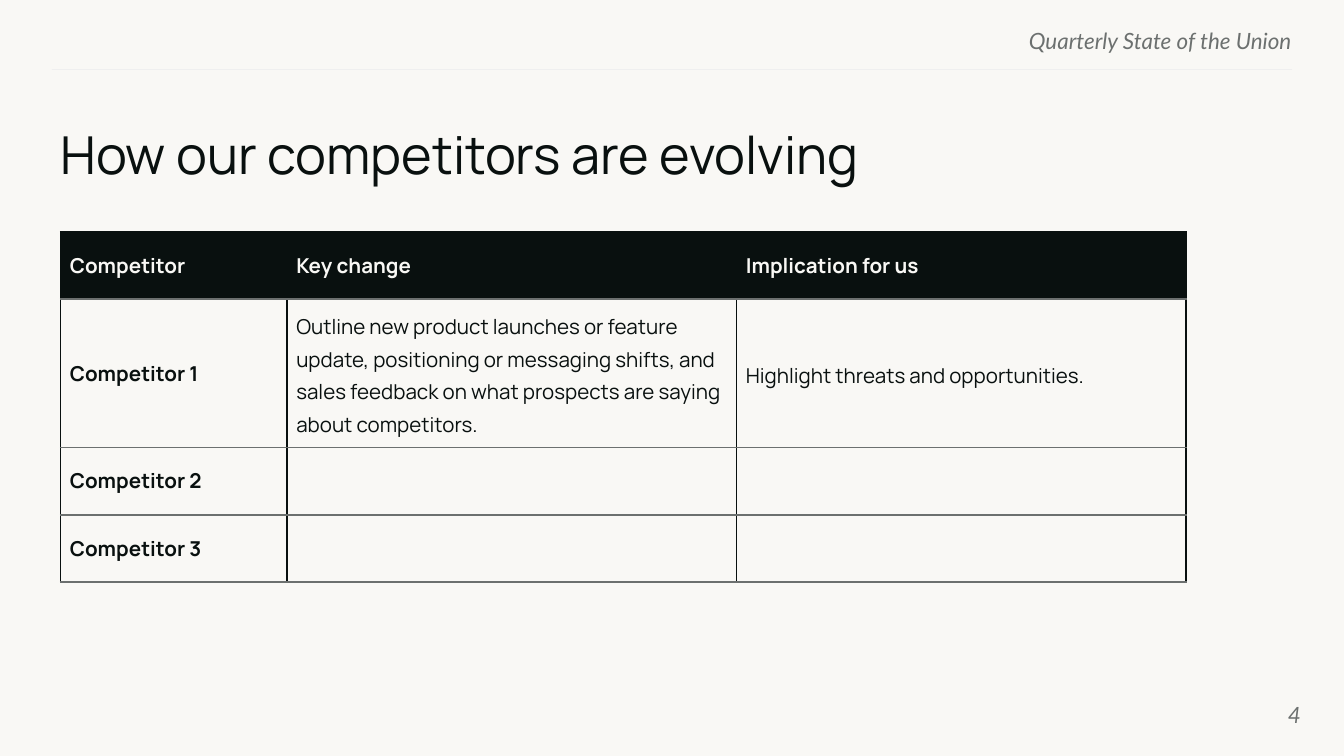
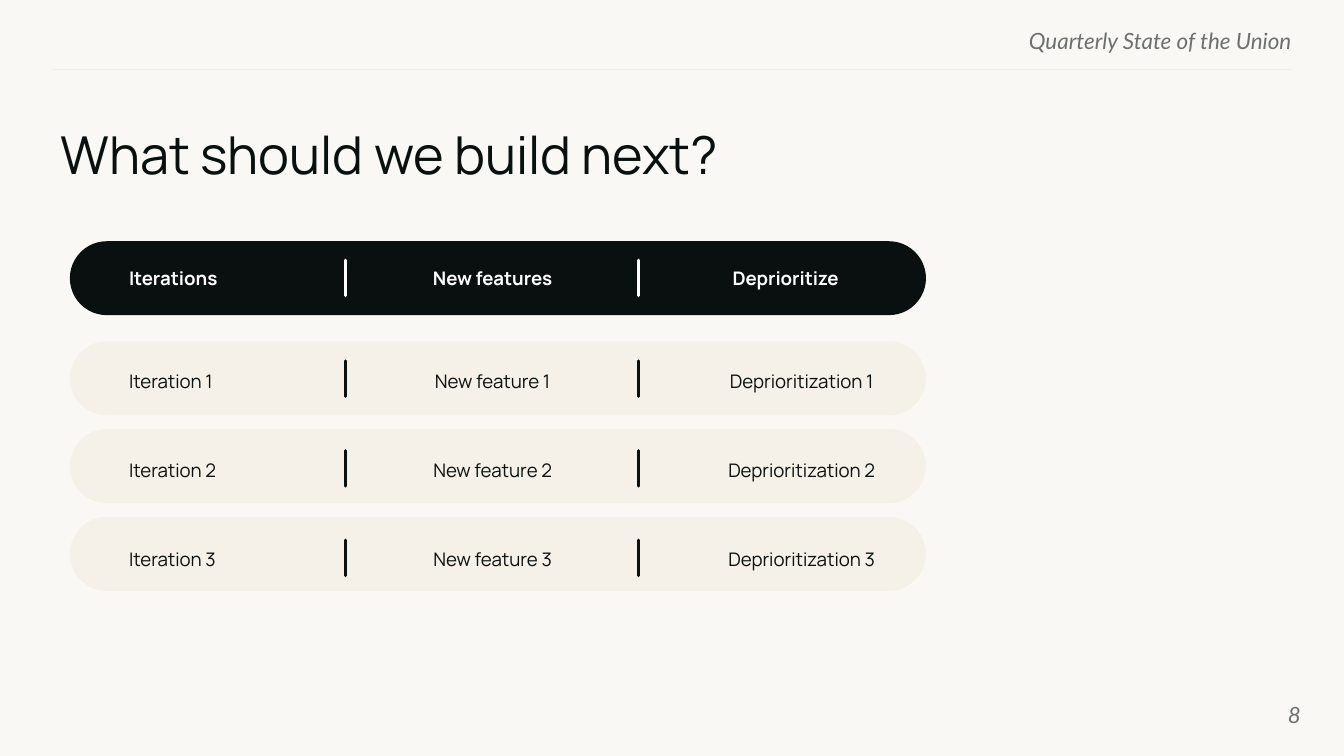
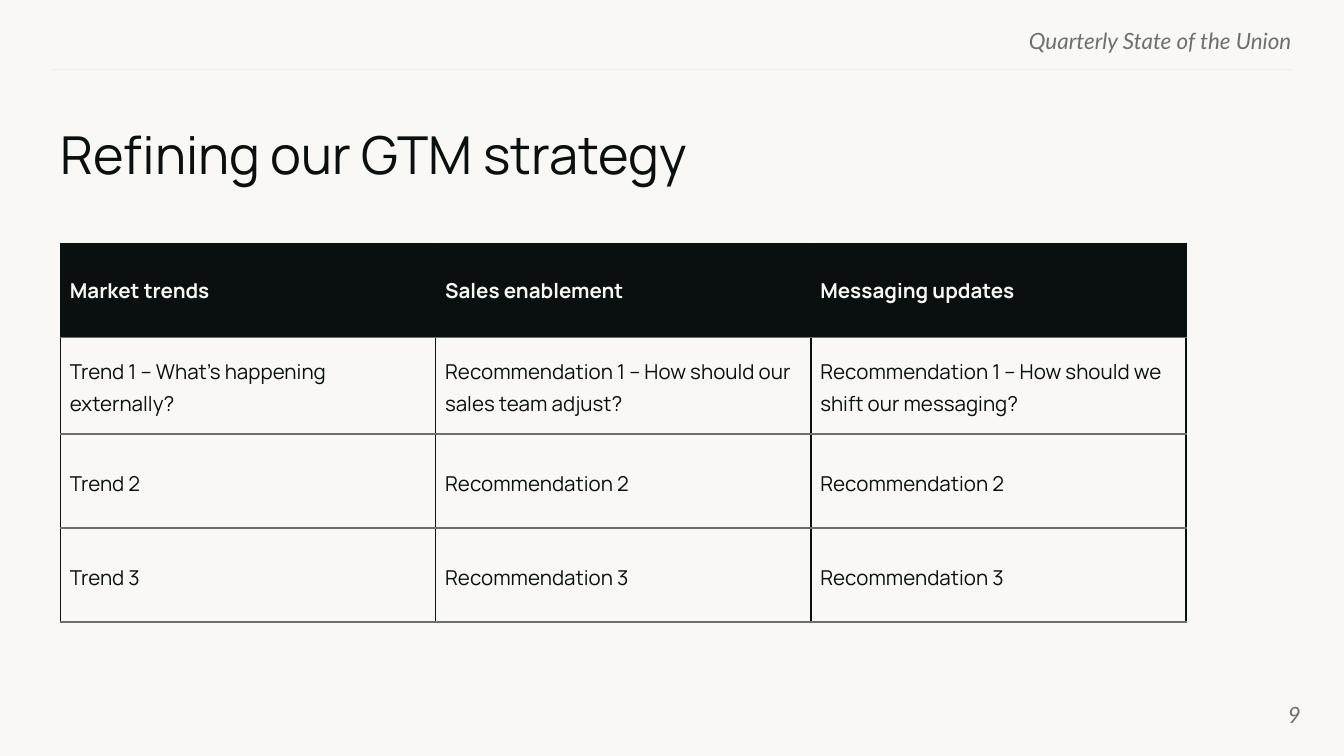
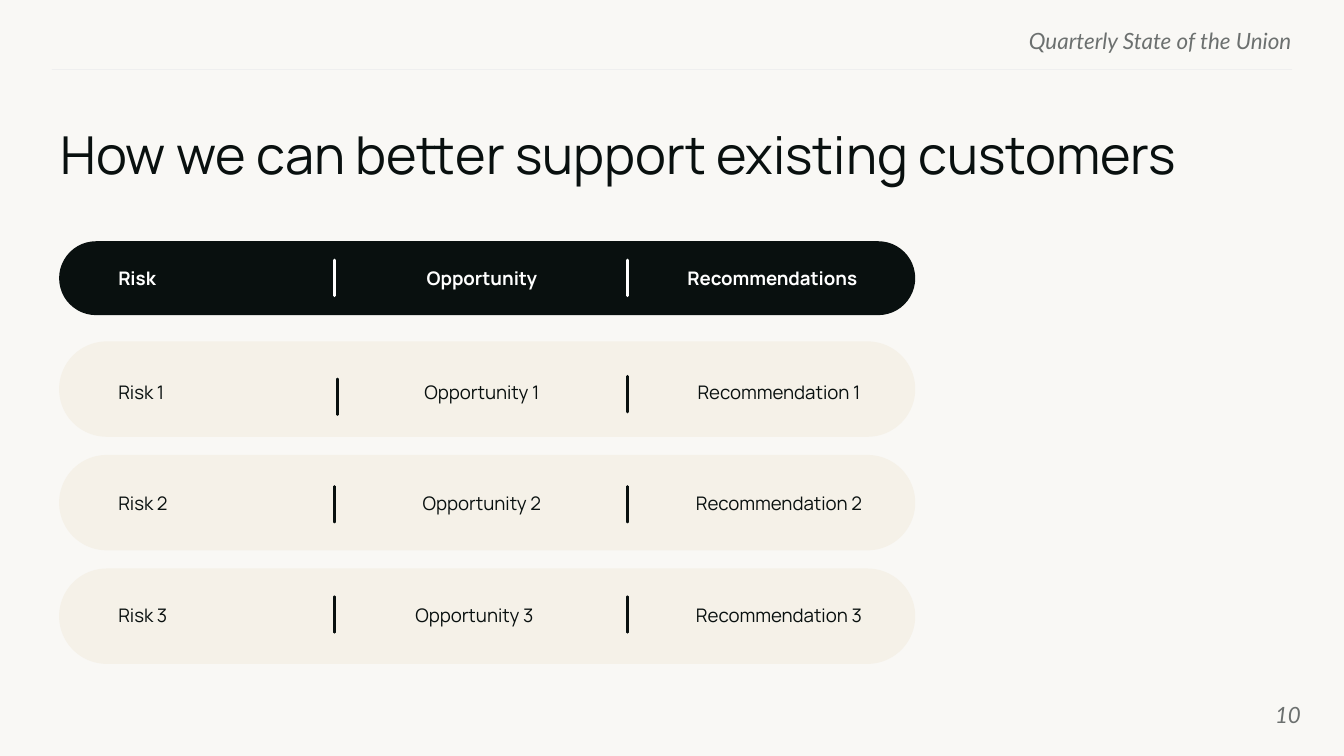
import collections

import pptx
import pptx.dml.color
import pptx.enum.shapes
import pptx.enum.text
import pptx.oxml
import pptx.oxml.ns
import pptx.util

RGBColor = pptx.dml.color.RGBColor
ALIGN = pptx.enum.text.PP_ALIGN
MIDDLE = pptx.enum.text.MSO_ANCHOR.MIDDLE

INK = RGBColor(0x09, 0x10, 0x0F)
PAPER = RGBColor(0xF9, 0xF8, 0xF5)
GREY = RGBColor(0x6C, 0x70, 0x6F)
RULE = RGBColor(0xEF, 0xEF, 0xEF)
CREAM = RGBColor(0xF5, 0xF1, 0xE8)
WHITE = RGBColor(0xFF, 0xFF, 0xFF)

BODY_FONT = "Manrope"
RUNNING_FONT = "Lato"

# All lengths are counted on a grid of square cells.
COLUMNS, ROWS = 100, 56.25
CELL = pptx.util.Inches(0.1)

Box = collections.namedtuple("Box", "left top width height")

TITLE_BOX = Box(4.5, 9.1, 92.3, 5.1)
RUNNING_HEAD_BOX = Box(57.6, 2, 38.5, 1.8)
PAGE_NUMBER_BOX = Box(90.8, 51, 6, 4.3)
HEAD_RULE = Box(3.9, 5.15, 92.2, 0)

PILL_WIDTH = 63.7
PILL_HEADER_HEIGHT = 5.5
FIRST_PILL = 7.45
DIVIDERS = (20.5, 42.3)
DIVIDER_HEIGHT = 2.65
LABEL_HEIGHT = 1.7
LABEL_COLUMNS = ((4.4, 10.2, ALIGN.LEFT), (26.5, 9.9, ALIGN.CENTER))


def grid(*cells):
    return [int(cell * CELL) for cell in cells]


def write_text(frame, text, size=10, font=BODY_FONT, color=INK, bold=False, italic=False,
               align=ALIGN.LEFT, line_spacing=None, space_after=None):
    paragraph = frame.paragraphs[0]
    paragraph.alignment = align
    paragraph.line_spacing = line_spacing
    if space_after:
        paragraph.space_after = pptx.util.Pt(space_after)
    run = paragraph.add_run()
    run.text = text
    run.font.size = pptx.util.Pt(size)
    run.font.name = font
    run.font.color.rgb = color
    run.font.bold = bold
    run.font.italic = italic


def add_text(shapes, box, text, anchor=MIDDLE, grow=False, **text_format):
    frame = shapes.add_textbox(*grid(*box)).text_frame
    frame.word_wrap = True
    frame.margin_left = frame.margin_right = frame.margin_top = frame.margin_bottom = 0
    frame.vertical_anchor = anchor
    if grow:
        frame.auto_size = pptx.enum.text.MSO_AUTO_SIZE.SHAPE_TO_FIT_TEXT
    write_text(frame, text, **text_format)


def add_line(shapes, box, color, width):
    """Draw a line from the top left to the bottom right of the box."""
    connector = shapes.add_connector(
        pptx.enum.shapes.MSO_CONNECTOR.STRAIGHT,
        *grid(box.left, box.top, box.left + box.width, box.top + box.height))
    connector.line.color.rgb = color
    connector.line.width = pptx.util.Pt(width)
    properties = connector._element.spPr
    properties.get_or_add_ln().set("cap", "rnd")
    properties.append(pptx.oxml.parse_xml(
        f'<a:effectLst {pptx.oxml.ns.nsdecls("a")}/>'))


def add_content_slide(presentation, title, number):
    """Add a slide with the running head, rule, title and page number."""
    slide = presentation.slides.add_slide(presentation.slide_layouts[6])
    running = dict(size=12, font=RUNNING_FONT, color=GREY, italic=True, align=ALIGN.RIGHT)
    top = pptx.enum.text.MSO_ANCHOR.TOP
    add_text(slide.shapes, RUNNING_HEAD_BOX, "Quarterly State of the Union", anchor=top, **running)
    add_line(slide.shapes, HEAD_RULE, RULE, 0.75)
    add_text(slide.shapes, TITLE_BOX, title, anchor=top, size=28, space_after=10)
    add_text(slide.shapes, PAGE_NUMBER_BOX, str(number), **running)
    return slide


def set_borders(cell, top_line):
    """Rule the sides in ink and the bottom in grey; top_line is (color, points)."""
    lines = {"lnL": (INK, 0.75), "lnR": (INK, 0.75), "lnT": top_line, "lnB": (GREY, 1)}
    properties = cell._tc.get_or_add_tcPr()
    for position, (tag, (color, width)) in enumerate(lines.items()):
        properties.insert(position, pptx.oxml.parse_xml(
            f'<a:{tag} {pptx.oxml.ns.nsdecls("a")} w="{pptx.util.Pt(width)}">'
            f'<a:solidFill><a:srgbClr val="{color}"/></a:solidFill></a:{tag}>'))


def add_ruled_table(slide, left, top, widths, heights, rows, bold_first_column=False):
    frame = slide.shapes.add_table(
        len(rows), len(widths), *grid(left, top, sum(widths), sum(heights)))
    table = frame.table
    table.horz_banding = table.first_row = False
    for column, width in zip(table.columns, widths):
        column.width = grid(width)[0]
    for row, height in zip(table.rows, heights):
        row.height = grid(height)[0]
    for row_index, texts in enumerate(rows):
        header = row_index == 0
        for column_index, text in enumerate(texts):
            cell = table.cell(row_index, column_index)
            cell.vertical_anchor = MIDDLE
            cell.margin_left = cell.margin_right = grid(0.7)[0]
            cell.margin_top = cell.margin_bottom = grid(0.7)[0]
            if header:
                cell.fill.solid()
                cell.fill.fore_color.rgb = INK
            else:
                cell.fill.background()
            set_borders(cell, (INK, 0.75) if header else (GREY, 1))
            bold = header or (bold_first_column and column_index == 0)
            if text:
                write_text(cell.text_frame, text, size=11, bold=bold,
                           color=PAPER if header else INK,
                           line_spacing=None if bold else 1.15)


def add_pill(shapes, box, color):
    pill = shapes.add_shape(pptx.enum.shapes.MSO_SHAPE.ROUNDED_RECTANGLE, *grid(*box))
    pill.adjustments[0] = 0.5
    pill.shadow.inherit = False
    pill.fill.solid()
    pill.fill.fore_color.rgb = color
    pill.line.fill.background()


def add_pill_row(slide, box, texts, label_top, divider_top, last_label, fill, color,
                 bold=False, nudge=(0, 0), middle_align=ALIGN.CENTER):
    """Group a pill, its dividers and labels; last_label is (left, width) in the pill."""
    shapes = slide.shapes.add_group_shape().shapes
    add_pill(shapes, box, fill)
    for offset, shift in zip(DIVIDERS, nudge):
        add_line(shapes, Box(box.left + offset + shift, divider_top + shift, 0, DIVIDER_HEIGHT),
                 color, 1.5)
    labels = (*LABEL_COLUMNS, (*last_label, ALIGN.CENTER))
    for index, (text, (offset, width, align)) in enumerate(zip(texts, labels)):
        add_text(shapes, Box(box.left + offset, label_top, width, LABEL_HEIGHT), text, grow=True,
                 color=color, bold=bold, align=middle_align if index == 1 else align)


def add_pill_list(slide, left, top, header, rows, header_last, row_last, height,
                  pill_pitch, label_start, label_pitch, divider_start, divider_pitch,
                  row_options=None):
    """Stack a dark header pill over light ones; starts count from top."""
    add_pill_row(slide, Box(left, top, PILL_WIDTH, PILL_HEADER_HEIGHT), header, top + 1.9,
                 top + 1.4, header_last, INK, WHITE, bold=True)
    for index, texts in enumerate(rows):
        box = Box(left, top + FIRST_PILL + index * pill_pitch, PILL_WIDTH, height)
        add_pill_row(slide, box, texts, top + label_start + index * label_pitch,
                     top + divider_start + index * divider_pitch, row_last, CREAM, INK,
                     **(row_options or {}).get(index, {}))


def add_competitors_slide(presentation):
    slide = add_content_slide(presentation, "How our competitors are evolving", 4)
    add_ruled_table(slide, 4.5, 17.25, (16.85, 33.45, 33.45), (5, 11.05, 5, 5), (
        ("Competitor", "Key change", "Implication for us"),
        ("Competitor 1",
         "Outline new product launches or feature update, positioning or messaging shifts, "
         "and sales feedback on what prospects are saying about competitors.",
         "Highlight threats and opportunities."),
        ("Competitor 2", "", ""),
        ("Competitor 3", "", ""),
    ), bold_first_column=True)


def add_build_next_slide(presentation):
    slide = add_content_slide(presentation, "What should we build next?", 8)
    add_pill_list(
        slide, 5.2, 17.95, ("Iterations", "New features", "Deprioritize"),
        [(f"Iteration {n}", f"New feature {n}", f"Deprioritization {n}") for n in (1, 2, 3)],
        header_last=(47.5, 11.5), row_last=(48.3, 12.3), height=5.5, pill_pitch=6.53,
        label_start=9.55, label_pitch=6.63, divider_start=8.9, divider_pitch=6.67)


def add_strategy_slide(presentation):
    slide = add_content_slide(presentation, "Refining our GTM strategy", 9)
    add_ruled_table(slide, 4.5, 18.1, [27.92] * 3, (7, 7.2, 7, 7), (
        ("Market trends", "Sales enablement", "Messaging updates"),
        ("Trend 1 – What’s happening externally?",
         "Recommendation 1 – How should our sales team adjust?",
         "Recommendation 1 – How should we shift our messaging?"),
        *((f"Trend {n}", f"Recommendation {n}", f"Recommendation {n}") for n in (2, 3)),
    ))


def add_support_slide(presentation):
    slide = add_content_slide(presentation, "How we can better support existing customers", 10)
    add_pill_list(
        slide, 4.4, 17.95, ("Risk", "Opportunity", "Recommendations"),
        [(f"Risk {n}", f"Opportunity {n}", f"Recommendation {n}") for n in (1, 2, 3)],
        header_last=(45.8, 14.5), row_last=(46.5, 14.1), height=7.1, pill_pitch=8.45,
        label_start=10.35, label_pitch=8.3, divider_start=10.05, divider_pitch=8.2,
        row_options={0: dict(nudge=(0.2, 0)), 2: dict(middle_align=ALIGN.LEFT)})


def main():
    presentation = pptx.Presentation()
    presentation.slide_width, presentation.slide_height = grid(COLUMNS, ROWS)
    background = presentation.slide_master.background.fill
    background.solid()
    background.fore_color.rgb = PAPER
    add_competitors_slide(presentation)
    add_build_next_slide(presentation)
    add_strategy_slide(presentation)
    add_support_slide(presentation)
    presentation.save("out.pptx")


if __name__ == "__main__":
    main()
